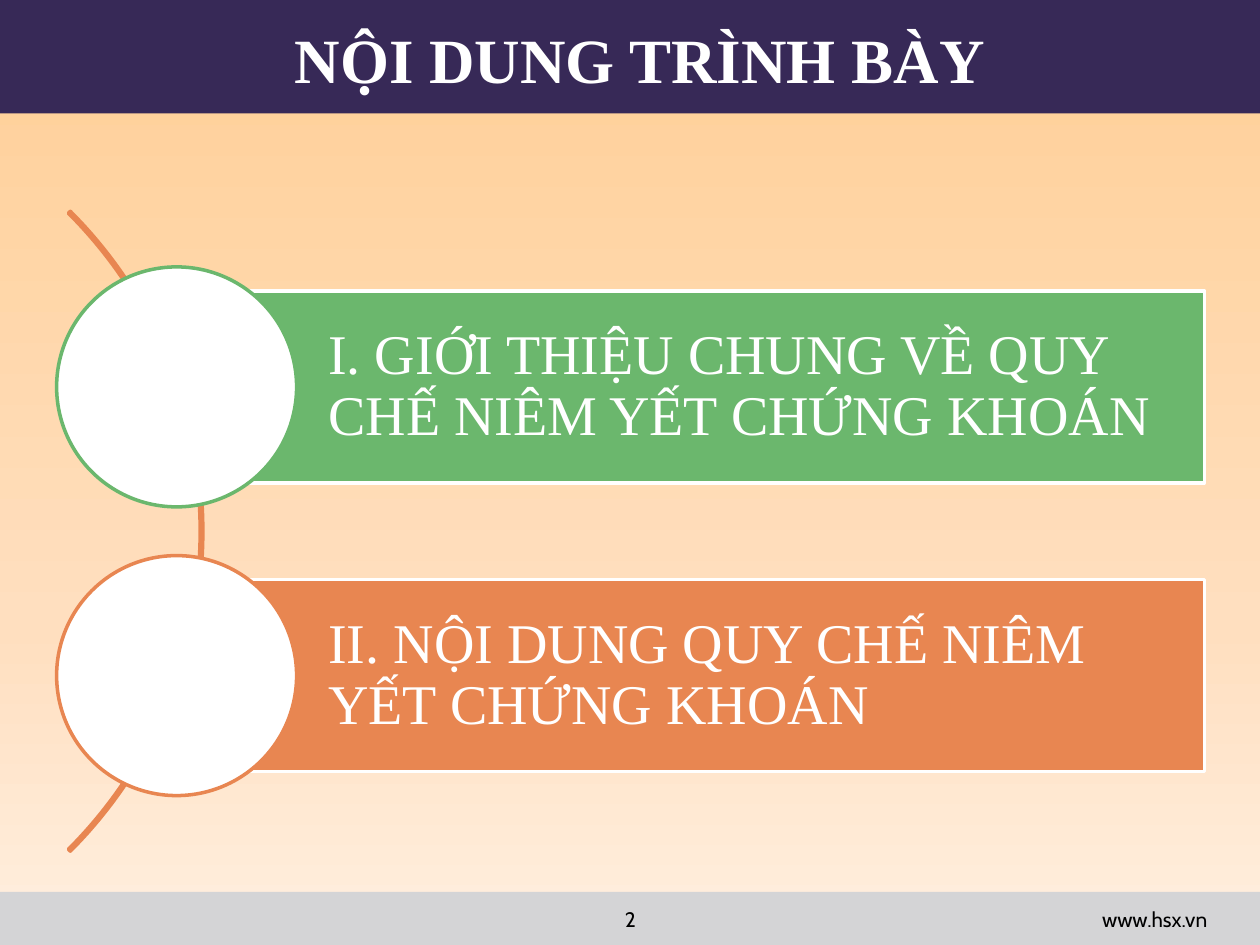
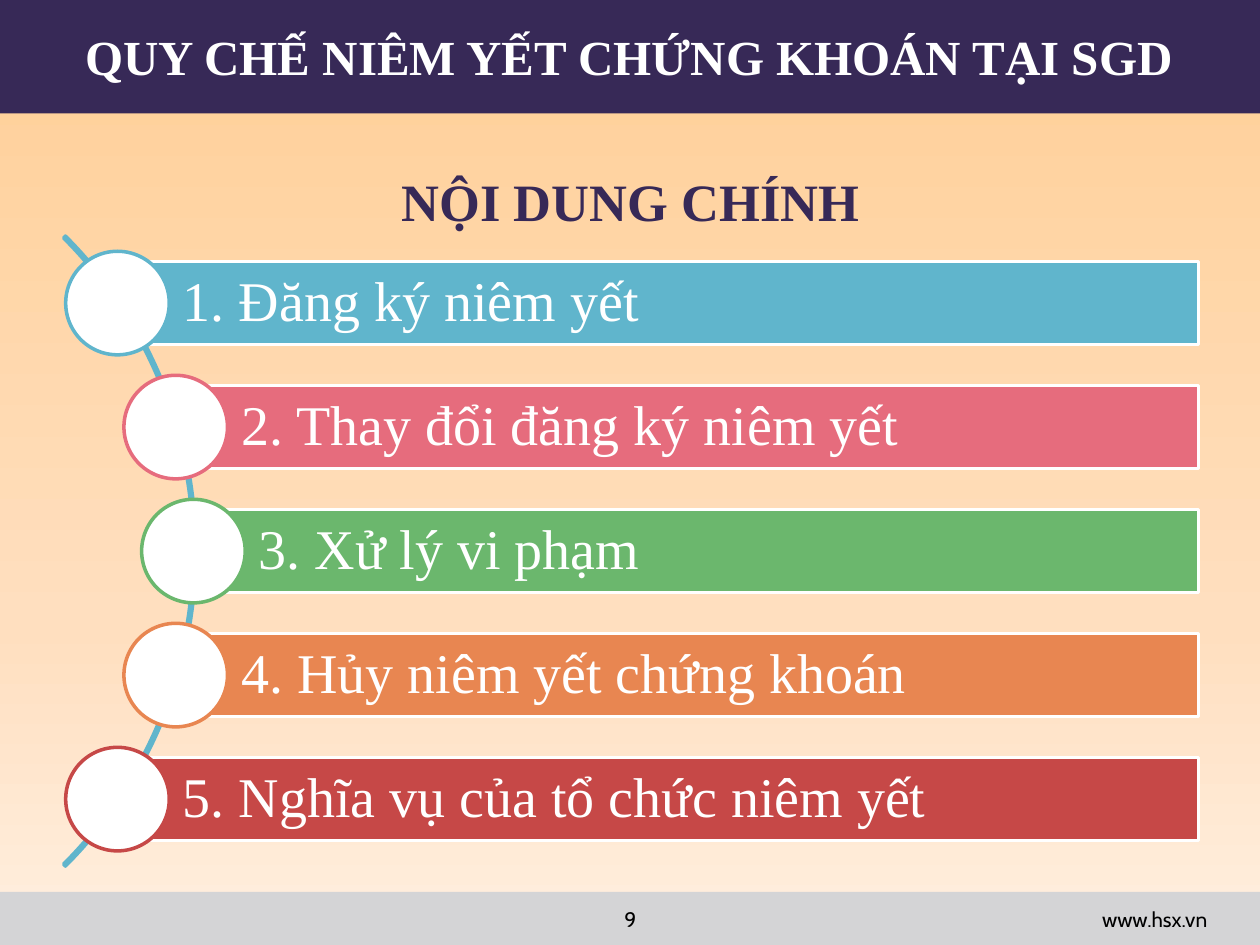
import copy
import math
from dataclasses import dataclass

import pptx
import pptx.dml.color
import pptx.enum.shapes
import pptx.enum.text
import pptx.util

Cm = pptx.util.Cm
SHAPES = pptx.enum.shapes.MSO_SHAPE
ALIGN = pptx.enum.text.PP_ALIGN
ANCHOR = pptx.enum.text.MSO_ANCHOR


@dataclass(frozen=True)
class Theme:
    navy: str = "372957"
    grey: str = "D4D4D6"
    white: str = "FFFFFF"
    black: str = "000000"
    blue: str = "60B5CC"
    pink: str = "E66C7D"
    green: str = "6BB76D"
    orange: str = "E88651"
    red: str = "C64847"
    backdrop: tuple = ((0, "FFCF96"), (0.66, "FFDFBF"), (1, "FFEFE0"))
    serif: str = "Times New Roman"
    sans: str = "Cabin"
    item_size: int = 32
    subtitle_size: int = 30
    footer_size: int = 12
    line_width: int = 2


theme = Theme()


def add_block(page, preset, left, top, width, height, fill=None, line=None):
    shape = page.shapes.add_shape(preset, Cm(left), Cm(top), Cm(width), Cm(height))
    shape.shadow.inherit = False
    if fill:
        shape.fill.solid()
        shape.fill.fore_color.rgb = pptx.dml.color.RGBColor.from_string(fill)
    else:
        shape.fill.background()
    if line:
        shape.line.color.rgb = pptx.dml.color.RGBColor.from_string(line)
        shape.line.width = pptx.util.Pt(theme.line_width)
    else:
        shape.line.fill.background()
    return shape


def write(shape, text, size, color, font=theme.serif, bold=False,
          align=ALIGN.LEFT, anchor=ANCHOR.MIDDLE):
    frame = shape.text_frame
    frame.word_wrap = True
    frame.vertical_anchor = anchor
    frame.text = text
    para = frame.paragraphs[0]
    para.alignment = align
    span = para.runs[0]
    span.font.name = font
    span.font.size = pptx.util.Pt(size)
    span.font.bold = bold
    span.font.color.rgb = pptx.dml.color.RGBColor.from_string(color)
    return para


pages = [
    dict(
        title="NỘI DUNG TRÌNH BÀY", title_size=36, title_align=ALIGN.CENTER,
        title_height=2.34, subtitle=None, number="2",
        arc_color=theme.orange, arc_size=18.24, center_y=10.71,
        pitch=5.82, bar_height=3.87, bar_right=24.28,
        items=[
            ("I. GIỚI THIỆU CHUNG VỀ QUY CHẾ NIÊM YẾT CHỨNG KHOÁN", theme.green),
            ("II. NỘI DUNG QUY CHẾ NIÊM YẾT CHỨNG KHOÁN", theme.orange),
        ],
    ),
    dict(
        title="QUY CHẾ NIÊM YẾT CHỨNG KHOÁN TẠI SGD", title_size=28,
        title_align=ALIGN.LEFT, title_height=2.24,
        subtitle="NỘI DUNG CHÍNH", number="9",
        arc_color=theme.blue, arc_size=17.96, center_y=11.11,
        pitch=2.5, bar_height=1.67, bar_right=24.16,
        items=[
            ("1. Đăng ký niêm yết", theme.blue),
            ("2. Thay đổi đăng ký niêm yết", theme.pink),
            ("3. Xử lý vi phạm", theme.green),
            ("4. Hủy niêm yết chứng khoán", theme.orange),
            ("5. Nghĩa vụ của tổ chức niêm yết", theme.red),
        ],
    ),
]

deck = pptx.Presentation()
deck.slide_width = Cm(25.4)
deck.slide_height = Cm(19.05)

backdrop = deck.slide_master.background.fill
backdrop.gradient()
backdrop.gradient_angle = 270
last_stop = deck.slide_master.element.xpath("./p:cSld/p:bg//a:gs")[-1]
last_stop.addnext(copy.deepcopy(last_stop))
for stop, (position, color) in zip(backdrop.gradient_stops, theme.backdrop):
    stop.position = position
    stop.color.rgb = pptx.dml.color.RGBColor.from_string(color)

arc_center_x = -5.03

for content in pages:
    page = deck.slides.add_slide(deck.slide_layouts[6])
    add_block(page, SHAPES.RECTANGLE, 0, 0, 25.4, 2.29, theme.navy)
    add_block(page, SHAPES.RECTANGLE, 0, 17.98, 25.4, 1.07, theme.grey)

    title = page.shapes.add_textbox(Cm(1.47), 0, Cm(22.86), Cm(content["title_height"]))
    write(title, content["title"], content["title_size"], theme.white,
          bold=True, align=content["title_align"])

    if content["subtitle"]:
        subtitle = page.shapes.add_textbox(Cm(1.07), Cm(3.28), Cm(23.29), Cm(1.5))
        write(subtitle, content["subtitle"], theme.subtitle_size, theme.navy,
              bold=True, align=ALIGN.CENTER, anchor=ANCHOR.TOP)

    for text, left, width, align in (
        (content["number"], 10.59, 4.24, ALIGN.CENTER),
        ("www.hsx.vn", 18.67, 5.92, ALIGN.RIGHT),
    ):
        footer = page.shapes.add_textbox(Cm(left), Cm(18.16), Cm(width), Cm(0.88))
        write(footer, text, theme.footer_size, theme.black, theme.sans,
              align=align, anchor=ANCHOR.TOP)

    arc_size = content["arc_size"]
    center_y = content["center_y"]
    arc = add_block(page, SHAPES.BLOCK_ARC, arc_center_x - arc_size / 2,
                    center_y - arc_size / 2, arc_size, arc_size,
                    line=content["arc_color"])
    arc.adjustments[0] = 189
    arc.adjustments[1] = 27
    arc.adjustments[2] = 0.003

    radius = arc_size / 2 - 0.05
    bar_height = content["bar_height"]
    circle_size = bar_height * 1.25
    middle = (len(content["items"]) - 1) / 2
    for index, (text, color) in enumerate(content["items"]):
        offset = (index - middle) * content["pitch"]
        item_x = arc_center_x + math.sqrt(radius ** 2 - offset ** 2)
        item_y = center_y + offset
        bar = add_block(page, SHAPES.RECTANGLE, item_x, item_y - bar_height / 2,
                        content["bar_right"] - item_x, bar_height, color, theme.white)
        para = write(bar, text, theme.item_size, theme.white)
        para.line_spacing = 0.9
        bar.text_frame.margin_left = Cm(bar_height * 0.79)
        bar.text_frame.margin_right = Cm(0.23)
        bar.text_frame.margin_top = bar.text_frame.margin_bottom = Cm(0.23)
        add_block(page, SHAPES.OVAL, item_x - circle_size / 2, item_y - circle_size / 2,
                  circle_size, circle_size, theme.white, color)

deck.save("out.pptx")
